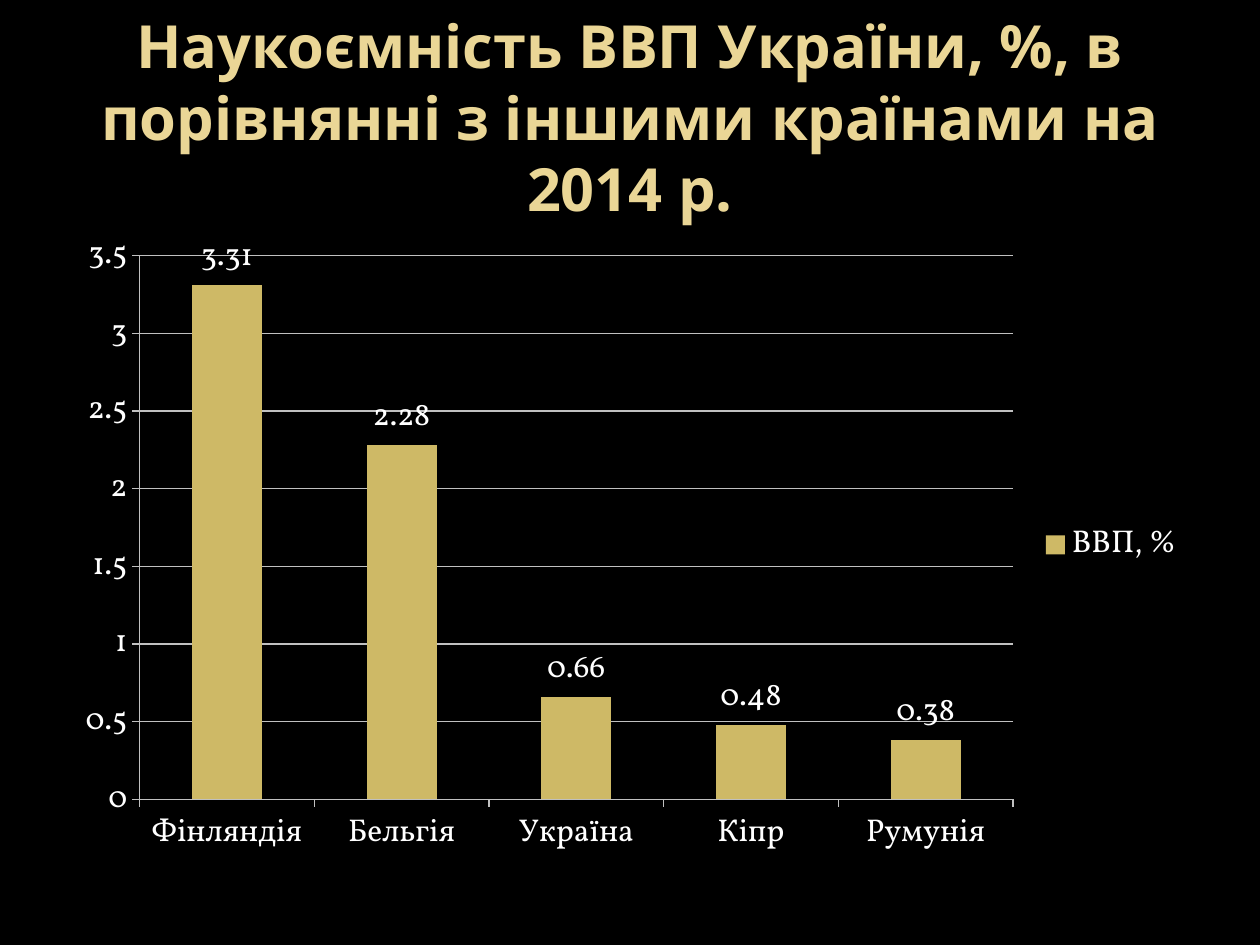
import pptx
import pptx.util
import pptx.chart.data
import pptx.dml.color
import pptx.enum.chart
import pptx.enum.text

Inches, Pt = pptx.util.Inches, pptx.util.Pt
enum = pptx.enum.chart

COLORS = {"back": "000000", "title": "EAD696", "text": "FFFFFF",
          "bar": "CEB966", "line": "C0C0C0"}
TITLE = "Наукоємність ВВП України, %, в порівнянні з іншими країнами на 2014 р."
DATA = {"Фінляндія": 3.31, "Бельгія": 2.28, "Україна": 0.66,
        "Кіпр": 0.48, "Румунія": 0.38}


def rgb(key):
    return pptx.dml.color.RGBColor.from_string(COLORS[key])


def apply(item, values):
    for key, value in values.items():
        setattr(item, key, value)


def paint(fill, color):
    fill.solid()
    fill.fore_color.rgb = rgb(color)


def style(font, color, values):
    apply(font, values)
    font.color.rgb = rgb(color)


def rule(line):
    line.width = Pt(0.75)
    line.color.rgb = rgb("line")


def add_title(slide, box):
    title = slide.shapes.title
    apply(title, dict(zip(("left", "top", "width", "height"), box)))
    frame = title.text_frame
    frame.text = TITLE
    apply(frame, {"word_wrap": True,
                  "auto_size": pptx.enum.text.MSO_AUTO_SIZE.NONE,
                  "vertical_anchor": pptx.enum.text.MSO_ANCHOR.MIDDLE})
    para = frame.paragraphs[0]
    para.alignment = pptx.enum.text.PP_ALIGN.CENTER
    style(para.runs[0].font, "title",
          {"name": "Noto Sans", "size": Pt(34), "bold": True})


def add_bars(slide, box):
    data = pptx.chart.data.CategoryChartData()
    data.categories = list(DATA)
    data.add_series("ВВП, %", list(DATA.values()))
    chart = slide.shapes.add_chart(
        enum.XL_CHART_TYPE.COLUMN_CLUSTERED, *box, data).chart
    apply(chart, {"has_title": False, "has_legend": True})
    style(chart.font, "text", {"name": "Vollkorn", "size": Pt(18)})
    apply(chart.legend, {"position": enum.XL_LEGEND_POSITION.RIGHT,
                         "include_in_layout": False})

    # Axes and grid
    for axis in (chart.category_axis, chart.value_axis):
        axis.major_tick_mark = enum.XL_TICK_MARK.OUTSIDE
        rule(axis.format.line)
    apply(chart.value_axis, {"minimum_scale": 0, "maximum_scale": 3.5,
                             "major_unit": 0.5, "has_major_gridlines": True})
    rule(chart.value_axis.major_gridlines.format.line)

    # Bars and their values
    plot = chart.plots[0]
    apply(plot, {"gap_width": 150, "vary_by_categories": False})
    bars = plot.series[0]
    paint(bars.format.fill, "bar")
    apply(bars.data_labels, {"show_value": True,
                             "position": enum.XL_LABEL_POSITION.OUTSIDE_END})


def main():
    deck = pptx.Presentation()
    apply(deck, {"slide_width": Inches(10), "slide_height": Inches(7.5)})
    slide = deck.slides.add_slide(deck.slide_layouts[5])
    paint(slide.background.fill, "back")
    add_title(slide, [Inches(n) for n in (0.5, 0.3, 9, 1.25)])
    add_bars(slide, [Inches(n) for n in (0.5, 1.75, 9, 5.15)])
    deck.save("out.pptx")


if __name__ == "__main__":
    main()
